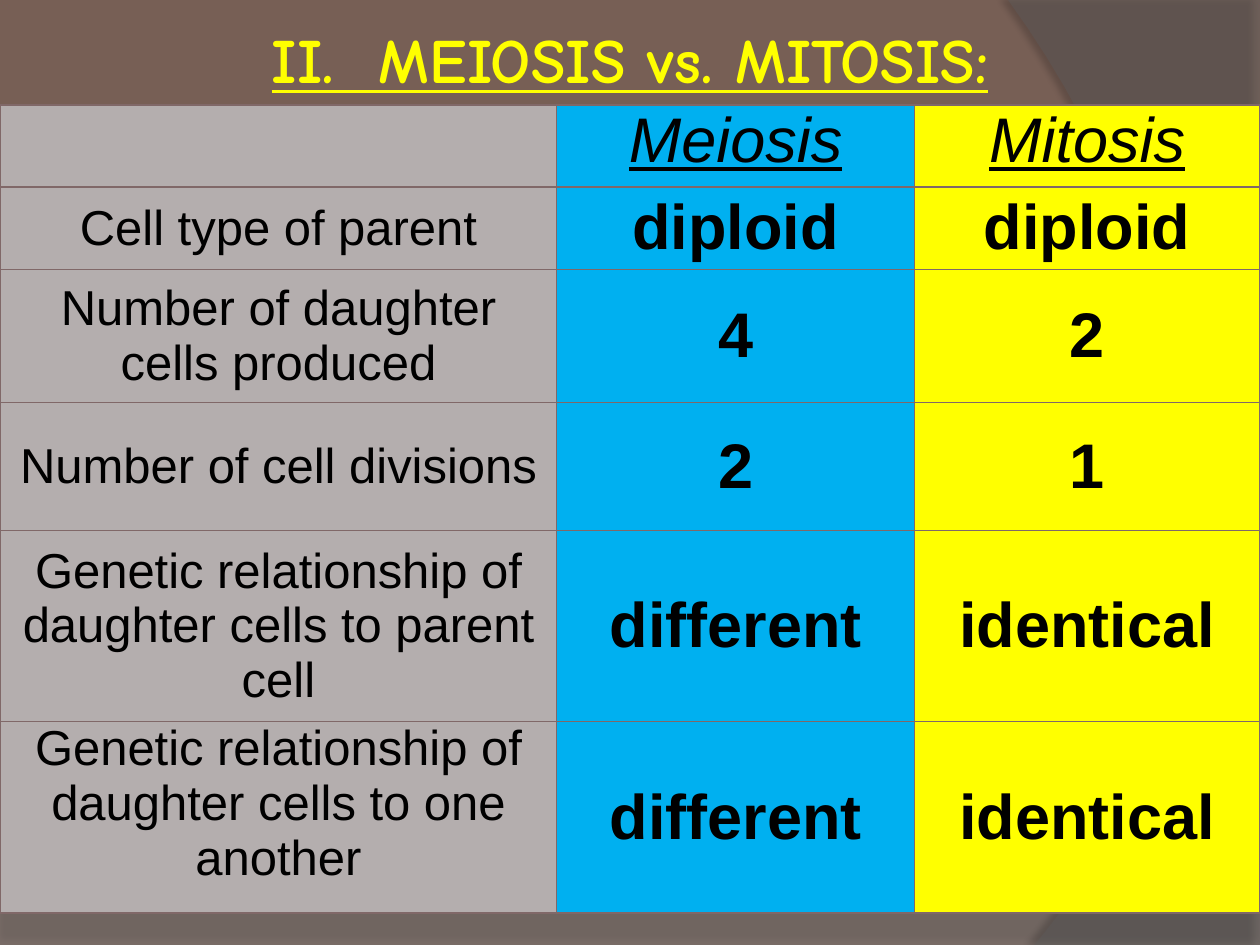
from dataclasses import dataclass

from lxml.etree import SubElement
from pptx import Presentation
from pptx.dml.color import RGBColor
from pptx.enum.text import MSO_ANCHOR, PP_ALIGN
from pptx.oxml.ns import qn
from pptx.util import Pt

GRAY, BLUE, YELLOW = "B4AEAE", "00B0F0", "FFFF00"
BORDER = "806868"
COLUMN_WIDTHS = (318.2, 204.4, 197.4)
ROW_HEIGHTS = (46.9, 46.9, 76.3, 72.9, 109.4, 109.4)
Point = tuple[float, float]


@dataclass
class Wave:
    """A translucent background band; its shadow angle is in degrees."""
    points: list[Point]
    color: str
    opacity: int
    shadow_opacity: int
    shadow_distance: float
    shadow_angle: int


@dataclass
class Row:
    label: str
    meiosis: str
    mitosis: str
    label_anchor: MSO_ANCHOR = MSO_ANCHOR.MIDDLE


ROWS = [
    Row("Cell type of parent", "diploid", "diploid"),
    Row("Number of daughter cells produced", "4", "2"),
    Row("Number of cell divisions", "2", "1"),
    Row("Genetic relationship of daughter cells to parent cell", "different", "identical"),
    Row("Genetic relationship of daughter cells to one another", "different", "identical",
        MSO_ANCHOR.TOP),
]


def rgb(color: str) -> RGBColor:
    return RGBColor.from_string(color)


def curve(start: Point, control_1: Point, control_2: Point, end: Point,
          steps: int = 40) -> list[Point]:
    """Return points along a cubic curve, both ends included."""
    points = []
    for step in range(steps + 1):
        t = step / steps
        weights = ((1 - t) ** 3, 3 * t * (1 - t) ** 2, 3 * t * t * (1 - t), t ** 3)
        points.append(tuple(
            sum(weight * value for weight, value in zip(weights, values))
            for values in zip(start, control_1, control_2, end)))
    return points


def write(text_frame, text: str, *, size: float, color: str = "000000",
          font: str = "Arial", bold: bool = False, italic: bool = False,
          underline: bool = False) -> None:
    text_frame.word_wrap = True
    paragraph = text_frame.paragraphs[0]
    paragraph.alignment = PP_ALIGN.CENTER
    run = paragraph.add_run()
    run.text = text
    run.font.name, run.font.size = font, Pt(size)
    run.font.bold, run.font.italic, run.font.underline = bold, italic, underline
    run.font.color.rgb = rgb(color)


def add_alpha(color_element, percent: int) -> None:
    SubElement(color_element, qn("a:alpha"), val=str(percent * 1000))


def draw_wave(slide, wave: Wave) -> None:
    points = [(Pt(x), Pt(y)) for x, y in wave.points]
    builder = slide.shapes.build_freeform(*points[0])
    builder.add_line_segments(points[1:], close=True)
    shape = builder.convert_to_shape()
    shape.line.fill.background()
    shape.fill.solid()
    shape.fill.fore_color.rgb = rgb(wave.color)
    add_alpha(shape.element.spPr.find(".//" + qn("a:srgbClr")), wave.opacity)
    # Soft outer shadow
    shape.shadow.inherit = False
    effects = shape.element.spPr.find(qn("a:effectLst"))
    shadow = SubElement(effects, qn("a:outerShdw"), blurRad=str(Pt(4)),
                        dist=str(Pt(wave.shadow_distance)),
                        dir=str(wave.shadow_angle * 60000), rotWithShape="0")
    add_alpha(SubElement(shadow, qn("a:srgbClr"), val="000000"), wave.shadow_opacity)


def format_cell(cell, fill: str, anchor: MSO_ANCHOR) -> None:
    cell.margin_left = cell.margin_right = Pt(5)
    cell.margin_top = cell.margin_bottom = Pt(0)
    cell.vertical_anchor = anchor
    properties = cell._tc.get_or_add_tcPr()
    for side in ("lnL", "lnR", "lnT", "lnB"):
        line = SubElement(properties, qn(f"a:{side}"), w=str(Pt(0.75)))
        SubElement(SubElement(line, qn("a:solidFill")), qn("a:srgbClr"), val=BORDER)
    cell.fill.solid()
    cell.fill.fore_color.rgb = rgb(fill)


def draw_table(slide) -> None:
    table = slide.shapes.add_table(
        len(ROW_HEIGHTS), len(COLUMN_WIDTHS), Pt(0), Pt(60),
        Pt(sum(COLUMN_WIDTHS)), Pt(sum(ROW_HEIGHTS))).table
    for column, width in zip(table.columns, COLUMN_WIDTHS):
        column.width = Pt(width)
    for row, height in zip(table.rows, ROW_HEIGHTS):
        row.height = Pt(height)

    # Column headings
    for index, (heading, fill) in enumerate(
            (("", GRAY), ("Meiosis", BLUE), ("Mitosis", YELLOW))):
        cell = table.cell(0, index)
        format_cell(cell, fill, MSO_ANCHOR.TOP)
        if heading:
            write(cell.text_frame, heading, size=36, italic=True, underline=True)

    # Comparison rows
    for index, row in enumerate(ROWS, start=1):
        label = table.cell(index, 0)
        format_cell(label, GRAY, row.label_anchor)
        write(label.text_frame, row.label, size=28)
        for column, (text, fill) in enumerate(
                ((row.meiosis, BLUE), (row.mitosis, YELLOW)), start=1):
            cell = table.cell(index, column)
            format_cell(cell, fill, MSO_ANCHOR.MIDDLE)
            write(cell.text_frame, text, size=36, bold=True)


def draw_title(slide) -> None:
    title = slide.shapes.title
    title.left, title.top, title.width, title.height = Pt(66), Pt(0), Pt(588), Pt(90)
    frame = title.text_frame
    frame.margin_left = frame.margin_right = frame.margin_top = Pt(3.6)
    frame.margin_bottom = Pt(27)
    frame.vertical_anchor = MSO_ANCHOR.MIDDLE
    write(frame, "II.  MEIOSIS vs. MITOSIS:", size=36, color=YELLOW,
          font="Comic Neue", bold=True, underline=True)
    # Bring the title in front of the waves
    title.element.getparent().append(title.element)


def main() -> None:
    presentation = Presentation()
    presentation.slide_width, presentation.slide_height = Pt(720), Pt(540)
    slide = presentation.slides.add_slide(presentation.slide_layouts[5])
    slide.background.fill.solid()
    slide.background.fill.fore_color.rgb = rgb("775F55")

    # Background waves
    bottom = [(0, 540), (720, 540),
              *curve((720, 374.4), (402.5, 525), (281.5, 517.7), (0, 507.6))]
    right = [(720, 0), (720, 540),
             *curve((591, 540), (673, 445.7), (733, 216), (576, 0))]
    draw_wave(slide, Wave(bottom, "7F7F7F", 45, 35, 3.5, 270))
    draw_wave(slide, Wave(right, "5E5E5E", 40, 45, 4, 180))

    draw_title(slide)
    draw_table(slide)
    presentation.save("out.pptx")


if __name__ == "__main__":
    main()
